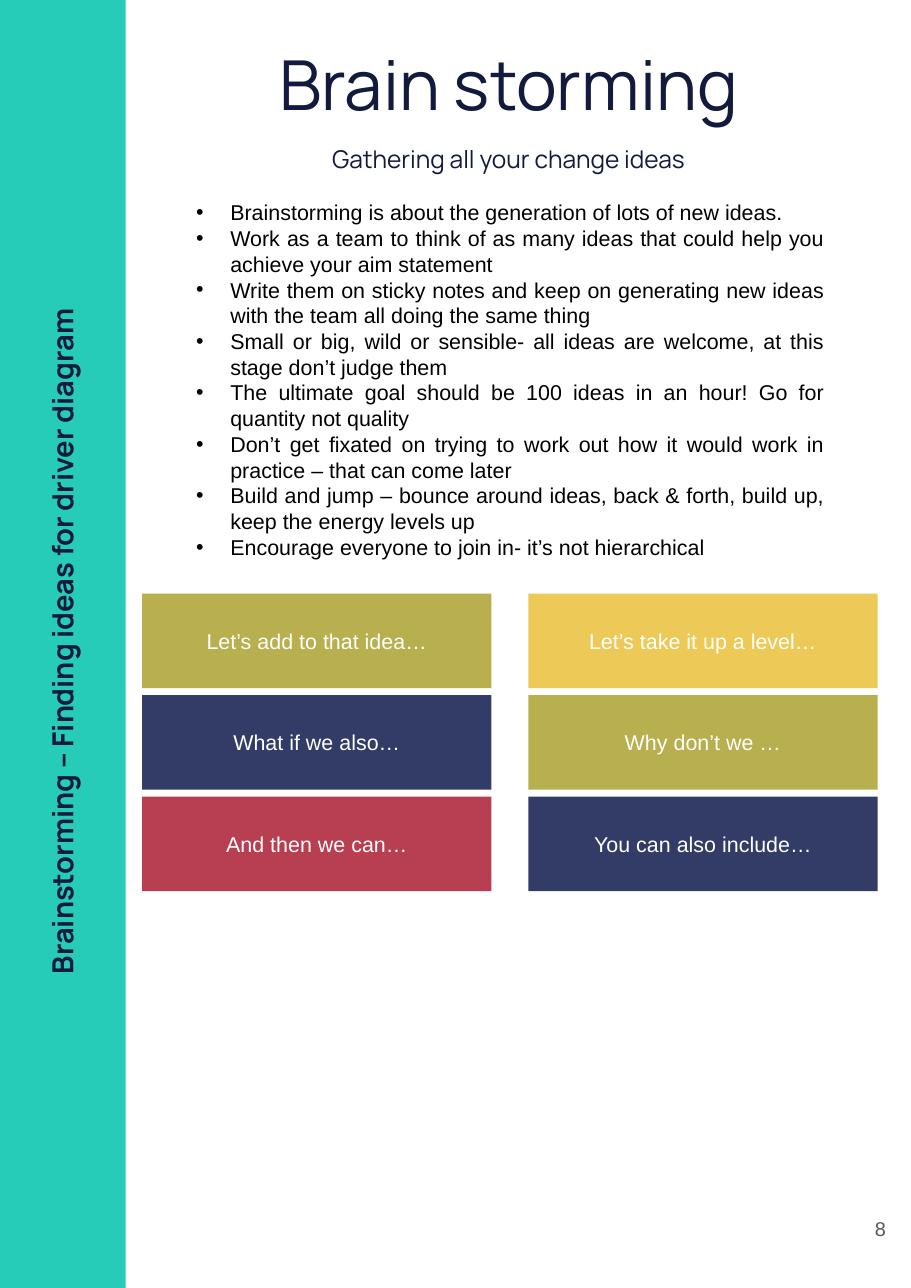
from lxml import etree
from pptx import Presentation
from pptx.dml.color import RGBColor
from pptx.enum.shapes import MSO_SHAPE
from pptx.enum.text import MSO_ANCHOR, PP_ALIGN
from pptx.oxml.ns import qn
from pptx.util import Cm, Pt

RECTANGLE = MSO_SHAPE.RECTANGLE
TOP, MIDDLE = MSO_ANCHOR.TOP, MSO_ANCHOR.MIDDLE
CENTER, RIGHT, JUSTIFY = PP_ALIGN.CENTER, PP_ALIGN.RIGHT, PP_ALIGN.JUSTIFY

NAVY, INDIGO, TEAL = "121A3D", "323C66", "26CCB8"
OLIVE, GOLD, RED = "B8AF4E", "EDCA57", "B73F51"
WHITE, BLACK, GREY = "FFFFFF", "000000", "595959"

TIPS = [
    "Brainstorming is about the generation of lots of new ideas.",
    "Work as a team to think of as many ideas that could help you achieve your aim statement",
    "Write them on sticky notes and keep on generating new ideas with the team all doing the same thing",
    "Small or big, wild or sensible- all ideas are welcome, at this stage don’t judge them",
    "The ultimate goal should be 100 ideas in an hour! Go for quantity not quality",
    "Don’t get fixated on trying to work out how it would work in practice – that can come later",
    "Build and jump – bounce around ideas, back & forth, build up, keep the energy levels up",
    "Encourage everyone to join in- it’s not hierarchical",
]

PROMPT_ROWS = [
    [("Let’s add to that idea…", OLIVE), ("Let’s take it up a level…", GOLD)],
    [("What if we also…", INDIGO), ("Why don’t we …", OLIVE)],
    [("And then we can…", RED), ("You can also include…", INDIGO)],
]


def color(value):
    """Return the colour for a hex string."""
    return RGBColor.from_string(value)


def add_box(page, left, top, width, height, anchor=TOP, margin=0.25):
    """Add a wrapping text box, measured in centimetres."""
    box = page.shapes.add_textbox(Cm(left), Cm(top), Cm(width), Cm(height))
    frame = box.text_frame
    frame.word_wrap = True
    frame.vertical_anchor = anchor
    frame.margin_left = frame.margin_right = Cm(margin)
    frame.margin_top = frame.margin_bottom = Cm(margin)
    return box


def add_block(page, left, top, width, height, fill):
    """Add a plain filled rectangle, measured in centimetres."""
    block = page.shapes.add_shape(RECTANGLE, Cm(left), Cm(top), Cm(width), Cm(height))
    block.shadow.inherit = False
    block.fill.solid()
    block.fill.fore_color.rgb = color(fill)
    block.line.fill.background()
    return block


def write(shape, text, size=14, font="Arial", ink=BLACK, bold=False,
          align=CENTER, before=0, spacing=1.0):
    """Write one formatted paragraph into a shape and return it."""
    frame = shape.text_frame
    para = frame.paragraphs[0] if not frame.text else frame.add_paragraph()
    para.alignment = align
    para.space_before = Pt(before)
    para.line_spacing = spacing
    span = para.add_run()
    span.text = text
    span.font.size = Pt(size)
    span.font.name = font
    span.font.bold = bold
    span.font.color.rgb = color(ink)
    return para


def add_bullet(para, indent):
    """Give a paragraph a round bullet with a hanging indent."""
    settings = para._p.get_or_add_pPr()
    settings.set("marL", str(Cm(indent)))
    settings.set("indent", str(-Cm(indent)))
    etree.SubElement(settings, qn("a:buFont")).set("typeface", "Arial")
    etree.SubElement(settings, qn("a:buChar")).set("char", "•")


def add_sidebar(page):
    """Add the teal band with its upward-reading section name."""
    add_block(page, 0, 0, 2.9, 29.7, TEAL)
    box = add_box(page, -11.81, 14.13, 26.49, 1.32)
    box.rotation = 270
    write(box, "Brainstorming – Finding ideas for driver diagram",
          size=19, font="Manrope", ink=NAVY, bold=True)


def add_heading(page):
    """Add the title and the subtitle."""
    box = add_box(page, 3.15, 0.71, 17.15, 3.58)
    write(box, "Brain storming", size=45, font="Manrope", ink=NAVY)
    write(box, "Gathering all your change ideas", size=16, font="Manrope",
          ink=NAVY, before=10, spacing=1.15)


def add_tips(page):
    """Add the bulleted list of brainstorming tips."""
    box = add_box(page, 4.27, 4.47, 14.99, 8.64, margin=0.13)
    box.text_frame.margin_left = box.text_frame.margin_right = Cm(0.25)
    for tip in TIPS:
        add_bullet(write(box, tip, align=JUSTIFY), indent=0.79)


def add_prompts(page):
    """Add the grid of coloured prompt cards."""
    for row, prompts in enumerate(PROMPT_ROWS):
        for column, (text, fill) in enumerate(prompts):
            card = add_block(page, 3.28 + 8.9 * column, 13.69 + 2.34 * row,
                             8.05, 2.18, fill)
            card.text_frame.vertical_anchor = MIDDLE
            write(card, text, ink=WHITE)


def add_page_number(page):
    """Add the page number in the lower right corner."""
    box = add_box(page, 19.48, 27.2, 1.27, 2.26, anchor=MIDDLE, margin=0.33)
    write(box, "8", size=13, ink=GREY, align=RIGHT)


def main():
    """Build the brainstorming page and save it."""
    deck = Presentation()
    deck.slide_width, deck.slide_height = Cm(21), Cm(29.7)
    page = deck.slides.add_slide(deck.slide_layouts[6])
    add_sidebar(page)
    add_heading(page)
    add_page_number(page)
    add_prompts(page)
    add_tips(page)
    deck.save("out.pptx")


if __name__ == "__main__":
    main()
